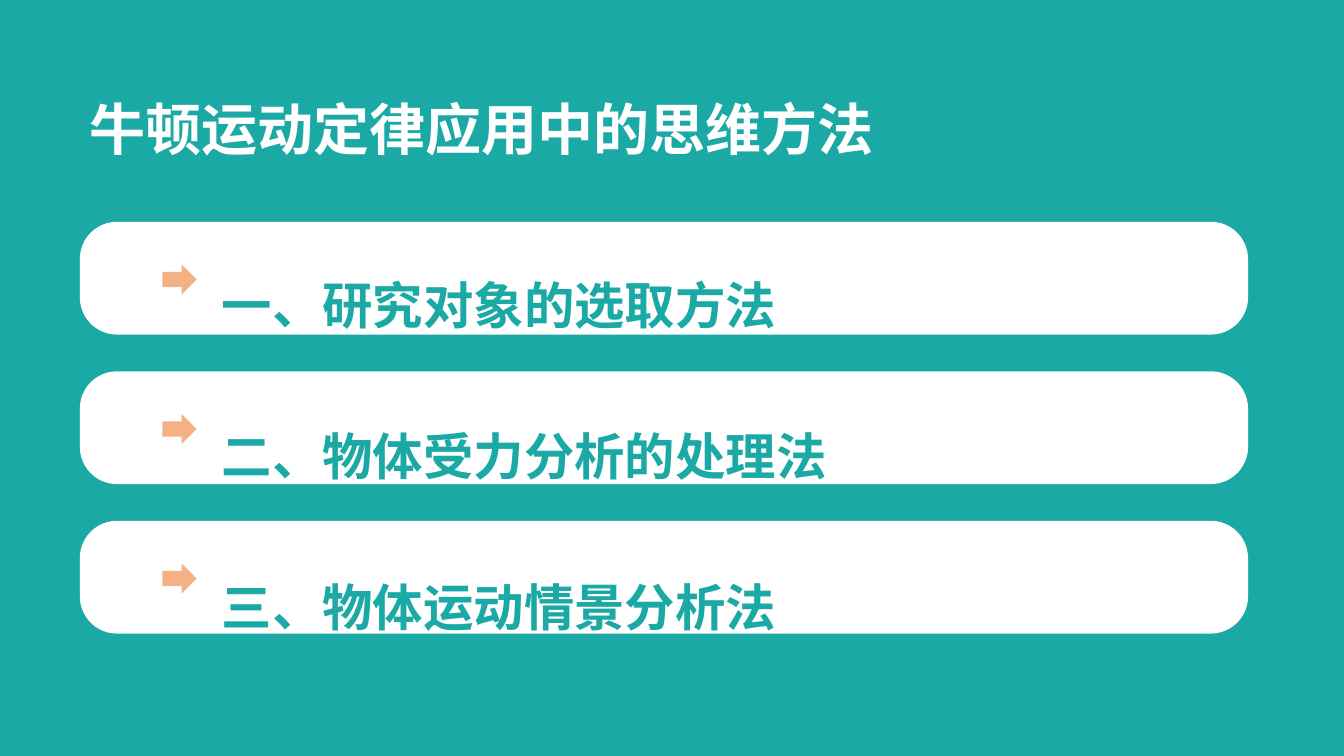
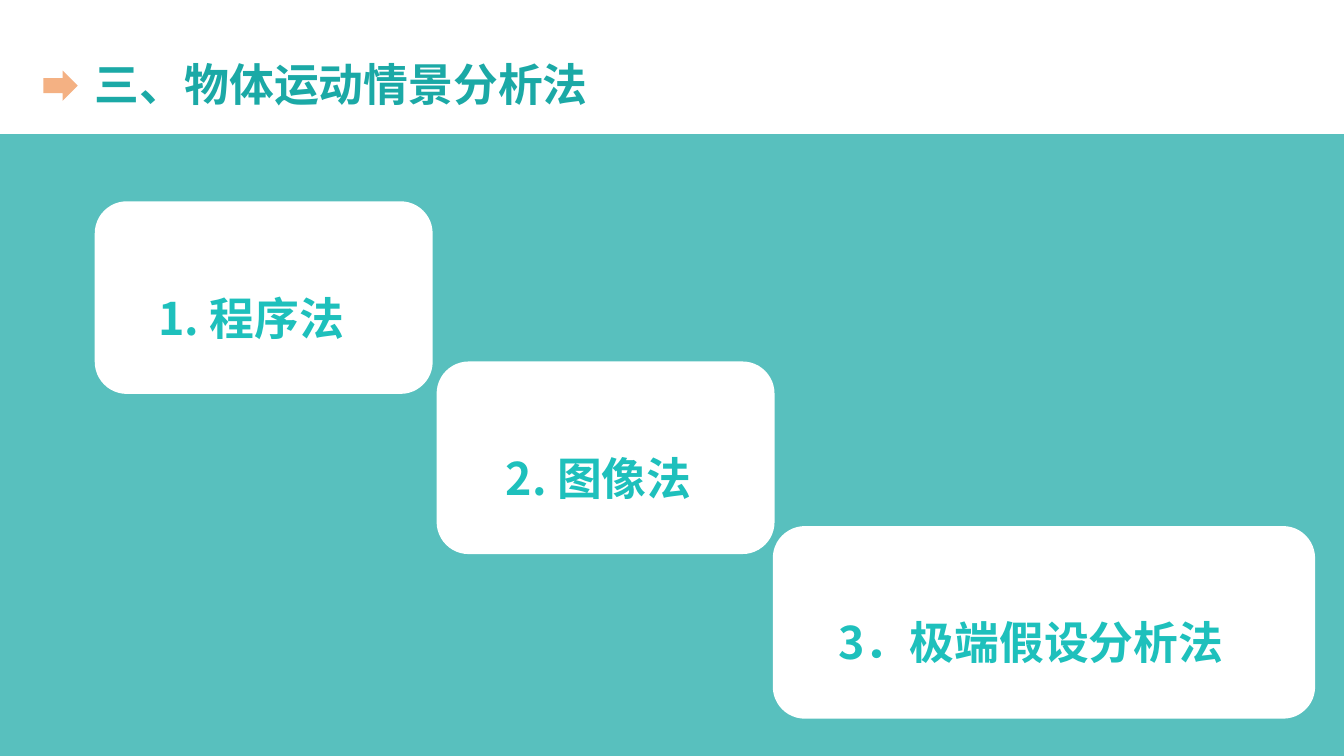
from lxml.etree import SubElement
from pptx import Presentation
from pptx.dml.color import RGBColor as Rgb
from pptx.enum.shapes import MSO_SHAPE as Kind
from pptx.enum.text import MSO_ANCHOR as Anchor, MSO_AUTO_SIZE as Fit, PP_ALIGN as Align
from pptx.oxml.ns import qn
from pptx.util import Pt

COLORS = {"teal": "1BA9A6", "aqua": "1EC0BC", "peach": "F4B183", "white": "FFFFFF"}
FONT = "Noto Sans CJK SC"
FRAME = {"word_wrap": True, "auto_size": Fit.SHAPE_TO_FIT_TEXT, "vertical_anchor": Anchor.TOP}
PARA = {"alignment": Align.LEFT, "space_before": Pt(0), "space_after": Pt(0)}
BOXES = ("left", "top", "width", "height")
WIDE, HIGH = 960, 540


def apply(item, values):
    for name, value in values.items():
        setattr(item, name, value)


def tint(fill, color):
    fill.solid()
    fill.fore_color.rgb = Rgb.from_string(COLORS[color])


class Deck:
    def __init__(self):
        self.show = Presentation()
        apply(self.show, {"slide_width": Pt(WIDE), "slide_height": Pt(HIGH)})
        self.slide = None

    def page(self, layout, color):
        self.slide = self.show.slides.add_slide(self.show.slide_layouts[layout])
        tint(self.slide.background.fill, color)

    def shape(self, kind, box, color, home=None, bend=None, alpha=None):
        """Draw a plain filled shape, on the slide or in the group given as home."""
        item = (home or self.slide).shapes.add_shape(kind, *map(Pt, box))
        item.shadow.inherit = False
        item.line.fill.background()
        tint(item.fill, color)
        if bend is not None:
            item.adjustments[0] = bend
        if alpha is not None:
            tone = next(item.element.iter(qn("a:srgbClr")))
            SubElement(tone, qn("a:alpha"), val=str(alpha * 1000))

    def arrow(self, left, top):
        self.shape(Kind.RIGHT_ARROW, (left, top, 24.5, 21.6), "peach")

    def text(self, item, lines, size, color, space=1.0):
        frame = item.text_frame
        frame.text = "\n".join(lines)
        apply(frame, FRAME)
        for para in frame.paragraphs:
            apply(para, {**PARA, "line_spacing": space})
            for run in para.runs:
                apply(run.font, {"name": FONT, "size": Pt(size), "bold": True})
                run.font.color.rgb = Rgb.from_string(COLORS[color])
        for latin in list(item.element.iter(qn("a:latin"))):
            east = SubElement(latin.getparent(), qn("a:ea"), typeface=FONT)
            latin.addnext(east)

    def place(self, item, box):
        """Move a placeholder to its box and in front of all shapes so far."""
        apply(item, dict(zip(BOXES, map(Pt, box))))
        item.element.getparent().append(item.element)

    def title(self, text, box, size, color):
        item = self.slide.shapes.title
        self.place(item, box)
        self.text(item, [text], size, color)

    def body(self, lines, box, size, color, space):
        item = self.slide.placeholders[1]
        self.place(item, box)
        self.text(item, lines, size, color, space)
        for props in item.element.iter(qn("a:pPr")):
            for name in ("marL", "indent"):
                props.set(name, "0")
            SubElement(props, qn("a:buNone"))

    def card(self, text, box, inset, room):
        """Group a rounded card with its label, inset from the left edge."""
        group = self.slide.shapes.add_group_shape()
        self.shape(Kind.ROUNDED_RECTANGLE, box, "white", group)
        left, top = box[:2]
        label = group.shapes.add_textbox(*map(Pt, (left + inset, top + 21.6, *room)))
        self.text(label, [text], 32, "aqua", 2.0)


def topics(deck, names):
    deck.page(1, "teal")
    deck.title("牛顿运动定律应用中的思维方法", (57, 64, 641, 55.5), 40, "white")
    for row in range(len(names)):
        top = 158.4 + row * 106.8
        deck.shape(Kind.ROUNDED_RECTANGLE, (57, top, 834.5, 80.6), "white", bend=0.33)
        deck.arrow(116, top + 30.5)
    deck.body(names, (151.2, 127.4, 688.3, 356.4), 36, "teal", 2.5)


def methods(deck, name):
    deck.page(5, "white")
    deck.shape(Kind.RECTANGLE, (0, 95.8, WIDE, HIGH - 95.8), "teal", alpha=73)
    deck.title(name, (60.5, 36.7, 480, 46), 32, "teal")
    deck.arrow(31, 50.4)
    high = 137.6
    cards = [
        ("1. 程序法", (67.7, 143.8, 241.4, high), 38.2, (198, 61.2)),
        ("2. 图像法", (311.9, 258.2, 241.4, high), 42.4, (198, 78.5)),
        ("3．极端假设分析法", (552, 375.8, 387.4, high), 39.8, (318.2, 105.8)),
    ]
    for card in cards:
        deck.card(*card)


def main():
    names = ["一、研究对象的选取方法", "二、物体受力分析的处理法", "三、物体运动情景分析法"]
    deck = Deck()
    topics(deck, names)
    methods(deck, names[-1])
    deck.show.save("out.pptx")


if __name__ == "__main__":
    main()
